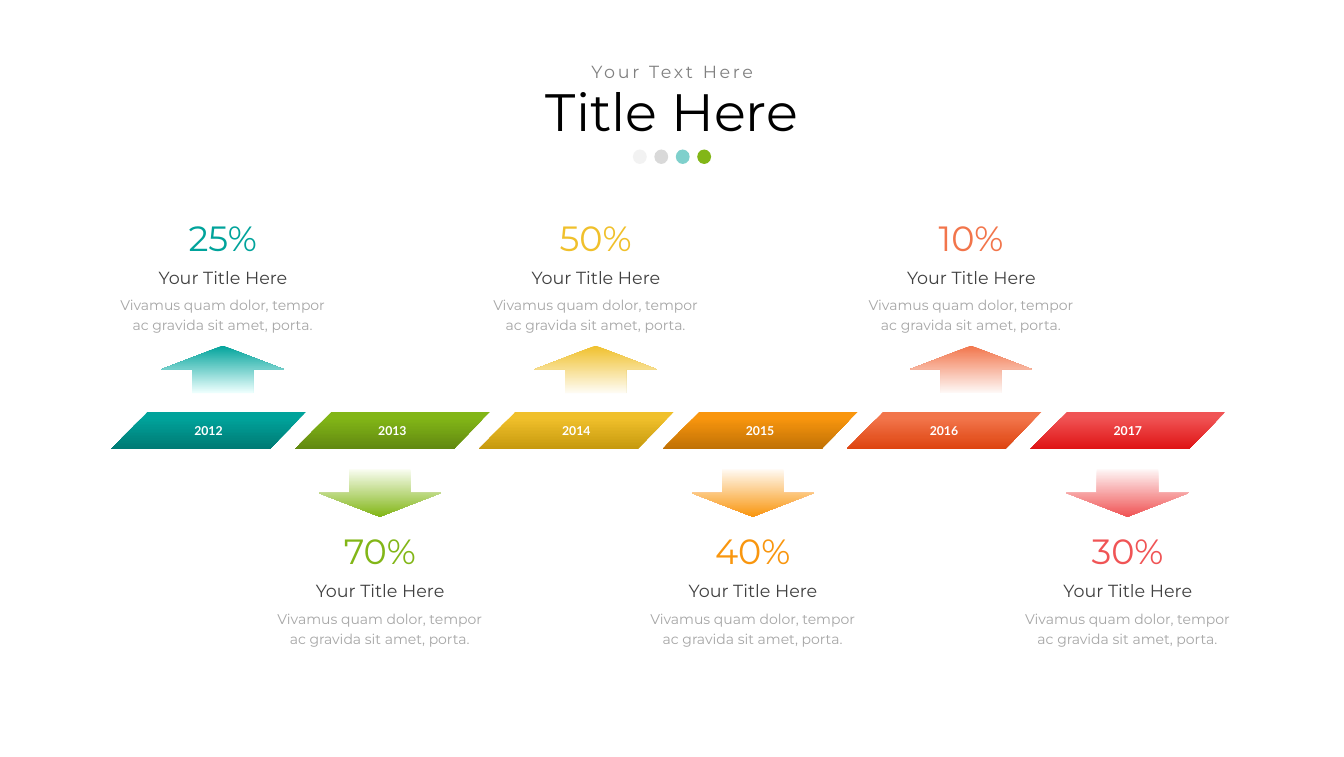
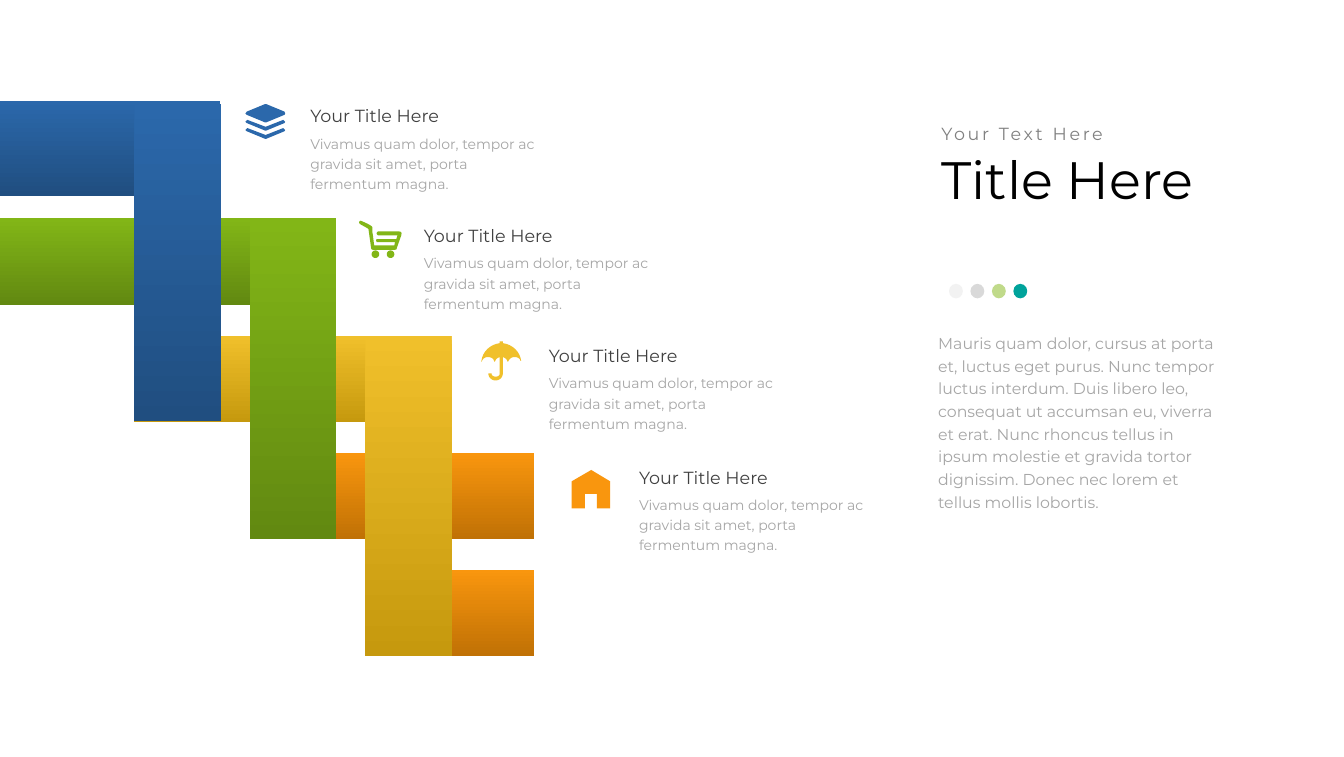
from dataclasses import dataclass
from math import cos, pi, sin
from typing import NamedTuple

from lxml import etree
from pptx import Presentation, util as u
from pptx.dml.color import RGBColor
from pptx.enum import shapes as sh, text as tx
from pptx.oxml import ns

In = u.Inches
LEFT, CENTER = tx.PP_ALIGN.LEFT, tx.PP_ALIGN.CENTER


@dataclass(frozen=True)
class Theme:
    font: str = "Montserrat"
    label_font: str = "Lato"
    # Colours
    title: str = "000000"
    subtitle: str = "808080"
    heading: str = "404040"
    body: str = "A6A6A6"
    white: str = "FFFFFF"
    light: str = "F2F2F2"
    grey: str = "D9D9D9"
    teal: str = "00A39B"
    green: str = "82B617"
    yellow: str = "F0C02B"
    orange: str = "F9960E"
    coral: str = "F2754B"
    red: str = "F05455"
    blue: str = "2B68AB"
    # Type sizes
    title_size: int = 60
    share_size: int = 40
    heading_size: int = 20
    intro_size: int = 18
    body_size: int = 16
    label_size: int = 14


T = Theme()
SHADE = {T.teal: "007A74", T.green: "628911", T.yellow: "C6990E",
         T.orange: "C07105", T.coral: "DE4410", T.red: "DF1415", T.blue: "204E80"}


class Box(NamedTuple):
    left: float
    top: float
    width: float
    height: float

    def emu(self) -> tuple:
        return tuple(In(side) for side in self)


class Style(NamedTuple):
    size: int
    color: str
    align: int = LEFT
    line: float = 1.2
    font: str = T.font
    bold: bool = False
    tracking: int = 0


class Milestone(NamedTuple):
    year: str
    share: str
    color: str
    pale: str
    center: float


class Band(NamedTuple):
    box: Box
    color: str


class Topic(NamedTuple):
    left: float
    top: float
    color: str
    icon_left: float
    icon_top: float
    icon: list


MILESTONES = [
    Milestone("2012", "25%", T.teal, "EEFFFE", 3.53),
    Milestone("2013", "70%", T.green, "F9FDF1", 6.02),
    Milestone("2014", "50%", T.yellow, "FEFCF4", 9.44),
    Milestone("2015", "40%", T.orange, "FFFAF3", 11.93),
    Milestone("2016", "10%", T.coral, "FEF8F6", 15.39),
    Milestone("2017", "30%", T.red, "FEF6F6", 17.87),
]

# Woven bands, from back to front
BANDS = [
    Band(Box(0, 3.46, 5.33, 1.37), T.green),
    Band(Box(2.13, 5.32, 5.03, 1.37), T.yellow),
    Band(Box(3.96, 7.18, 4.5, 1.37), T.orange),
    Band(Box(5.79, 9.03, 2.67, 1.37), T.orange),
    Band(Box(0, 1.6, 3.49, 1.5), T.blue),
    Band(Box(2.13, 1.65, 1.37, 5.03), T.blue),
    Band(Box(3.96, 3.46, 1.37, 5.09), T.green),
    Band(Box(5.79, 5.32, 1.37, 5.08), T.yellow),
]


# Icon outlines: a pair is a corner, six numbers are a cubic curve
def wheel(x: float, y: float, radius: float) -> list:
    return [(x + radius * cos(k * pi / 12), y + radius * sin(k * pi / 12)) for k in range(24)]


def chevron(top: float) -> list:
    points = [(.03, 0), (.32, .11), (.6, 0), (.63, .03), (.62, .05),
              (.33, .17), (.31, .17), (.02, .05), (0, .03)]
    return [(x, y + top) for x, y in points]


LAYERS = [
    [(.02, .12), (.31, 0), (.33, 0), (.62, .12), (.63, .15),
     (.62, .17), (.33, .29), (.31, .29), (.02, .17), (0, .15)],
    chevron(.25), chevron(.38),
]
CART = [
    [(.66, .18), (.32, .18), (.32, .18, .3, .19, .3, .21), (.3, .23, .32, .24, .32, .24),
     (.63, .24), (.61, .3), (.3, .3), (.29, .32), (.3, .35), (.59, .35), (.58, .4),
     (.26, .4), (.24, .24), (.23, .18), (.23, .11), (.22, .09, .17, .06, .05, .01),
     (.03, 0, 0, .05, .05, .07), (.14, .12), (.17, .14), (.21, .43),
     (.21, .43, .21, .47, .24, .47), (.59, .47), (.62, .47, .62, .44, .62, .44),
     (.69, .24), (.69, .24, .71, .18, .66, .18)],
    wheel(.28, .54, .06), wheel(.52, .54, .06),
]
UMBRELLA = [
    [(.63, .31), (.61, .16, .49, .05, .34, .03), (.34, 0), (.29, 0), (.29, .03),
     (.14, .05, .02, .16, 0, .31), (0, .33, 0, .33, .01, .31),
     (.03, .27, .06, .25, .1, .25), (.15, .25, .19, .27, .2, .31),
     (.21, .33, .21, .33, .22, .31), (.23, .28, .26, .26, .29, .25), (.29, .51),
     (.29, .54, .27, .56, .23, .56), (.22, .56), (.19, .56, .16, .54, .16, .51),
     (.11, .51), (.11, .57, .16, .62, .22, .62), (.23, .62),
     (.29, .62, .34, .57, .34, .51), (.34, .25), (.37, .26, .4, .28, .41, .31),
     (.42, .33, .42, .33, .43, .31), (.45, .27, .48, .25, .53, .25),
     (.57, .25, .61, .27, .62, .31)],
]
HOUSE = [[(0, .18), (0, .61), (.21, .61), (.21, .38), (.4, .38),
          (.4, .61), (.61, .61), (.61, .18), (.31, 0)]]

TOPICS = [
    Topic(4.82, 1.55, T.blue, 3.89, 1.65, LAYERS),
    Topic(6.62, 3.45, T.green, 5.67, 3.49, CART),
    Topic(8.6, 5.35, T.yellow, 7.63, 5.41, UMBRELLA),
    Topic(10.03, 7.28, T.orange, 9.06, 7.45, HOUSE),
]

HEADING = "Your Title Here"
BLURB = "Vivamus quam dolor, tempor ac gravida sit amet, porta"
INTRO = ("Mauris quam dolor, cursus at porta et, luctus eget purus. Nunc tempor luctus "
         "interdum. Duis libero leo, consequat ut accumsan eu, viverra et erat. Nunc rhoncus "
         "tellus in ipsum molestie et gravida tortor dignissim. Donec nec lorem et tellus "
         "mollis lobortis.")


# Formatting helpers
def assign(target, values: dict) -> None:
    for name, value in values.items():
        setattr(target, name, value)


def paint(shape, color: str, alpha: int = 100) -> None:
    shape.shadow.inherit = False
    shape.line.fill.background()
    shape.fill.solid()
    shape.fill.fore_color.rgb = RGBColor.from_string(color)
    if alpha < 100:
        rgb = shape.fill._xPr.find(".//" + ns.qn("a:srgbClr"))
        etree.SubElement(rgb, ns.qn("a:alpha"), val=str(alpha * 1000))


def shade(shape, top: str, bottom: str, start: float = 0) -> None:
    """Fill a shape with a gradient that runs downwards."""
    shape.shadow.inherit = False
    shape.line.fill.background()
    shape.fill.gradient()
    shape.fill.gradient_angle = 270
    for stop, color, position in zip(shape.fill.gradient_stops, (top, bottom), (start, 1)):
        stop.color.rgb = RGBColor.from_string(color)
        stop.position = position


def write(shape, text: str, style: Style, **frame_format) -> None:
    frame = shape.text_frame
    assign(frame, {"word_wrap": True, "vertical_anchor": tx.MSO_ANCHOR.TOP,
                   "auto_size": tx.MSO_AUTO_SIZE.NONE, **frame_format})
    paragraph = frame.paragraphs[0]
    assign(paragraph, {"alignment": style.align, "line_spacing": style.line})
    run = paragraph.add_run()
    run.text = text
    assign(run.font, {"size": u.Pt(style.size), "name": style.font, "bold": style.bold})
    run.font.color.rgb = RGBColor.from_string(style.color)
    if style.tracking:
        run._r.get_or_add_rPr().set("spc", str(style.tracking * 100))


def add_text(slide, box: Box, text: str, style: Style, **frame_format) -> None:
    write(slide.shapes.add_textbox(*box.emu()), text, style, **frame_format)


def add_growing(slide, box: Box, text: str, style: Style, wrap: bool = True) -> None:
    add_text(slide, box, text, style, word_wrap=wrap,
             auto_size=tx.MSO_AUTO_SIZE.SHAPE_TO_FIT_TEXT)


# Parts that both slides share
def add_header(slide, title: Box, subtitle: Box, align: int) -> None:
    holder = slide.shapes.title
    assign(holder, dict(zip(("left", "top", "width", "height"), title.emu())))
    write(holder, "Title Here", Style(T.title_size, T.title, align, 0.9))
    add_text(slide, subtitle, "Your Text Here",
             Style(T.heading_size, T.subtitle, align, 0.9, tracking=3))


def add_dots(slide, left: float, top: float, third: str, fourth: str) -> None:
    dots = [(T.light, 100), (T.grey, 98), (third, 50), (fourth, 100)]
    for i, (color, alpha) in enumerate(dots):
        box = Box(left + 0.34 * i, top, 0.22, 0.23)
        paint(slide.shapes.add_shape(sh.MSO_SHAPE.OVAL, *box.emu()), color, alpha)


def add_caption(slide, heading: Box, body: Box, text: str, align: int) -> None:
    add_growing(slide, heading, HEADING, Style(T.heading_size, T.heading, align))
    add_growing(slide, body, text, Style(T.body_size, T.body, align))


def add_icon(slide, topic: Topic) -> None:
    def place(x: float, y: float) -> tuple:
        return In(topic.icon_left + x), In(topic.icon_top + y)

    builder = None
    for contour in topic.icon:
        pen = contour[0]
        if builder is None:
            builder = slide.shapes.build_freeform(*place(*pen))
        else:
            builder.move_to(*place(*pen))
        points = []
        for step in contour[1:]:
            if len(step) == 2:
                points.append(step)
            else:
                xs, ys = (pen[0], *step[::2]), (pen[1], *step[1::2])
                for t in (k / 8 for k in range(1, 9)):
                    weights = ((1 - t) ** 3, 3 * t * (1 - t) ** 2, 3 * t * t * (1 - t), t ** 3)
                    points.append(tuple(sum(w * v for w, v in zip(weights, axis))
                                        for axis in (xs, ys)))
            pen = step[-2:]
        builder.add_line_segments([place(*point) for point in points], close=True)
    paint(builder.convert_to_shape(), topic.color)


# Slides
def build_timeline(slide) -> None:
    add_header(slide, Box(1.02, 1.31, 19.26, 1.03), Box(7.48, 0.95, 6.35, 0.35), CENTER)
    add_dots(slide, 10.03, 2.37, T.teal, T.green)
    label = Style(T.label_size, T.white, CENTER, 1, T.label_font, True)
    for i, item in enumerate(MILESTONES):
        # Year on the band
        box = Box(1.76 + 2.914 * i, 6.53, 3.09, 0.59)
        year = slide.shapes.add_shape(sh.MSO_SHAPE.PARALLELOGRAM, *box.emu())
        year.adjustments[0] = 0.98
        shade(year, item.color, SHADE[item.color], 0.15)
        write(year, item.year, label, vertical_anchor=tx.MSO_ANCHOR.MIDDLE)

        # Arrow and caption, above and below by turns
        above = i % 2 == 0
        arrow_top, top = (5.48, 3.38) if above else (7.44, 8.35)
        kind = sh.MSO_SHAPE.UP_ARROW if above else sh.MSO_SHAPE.DOWN_ARROW
        arrow = slide.shapes.add_shape(kind, *Box(item.center - 0.97, arrow_top, 1.94, 0.75).emu())
        shade(arrow, *((item.color, item.pale) if above else (item.pale, item.color)))
        add_growing(slide, Box(item.center - 0.75, top, 1.5, 0.77), item.share,
                    Style(T.share_size, item.color, CENTER, 1), wrap=False)
        add_caption(slide, Box(item.center - 1.86, top + 0.73, 3.73, 0.51),
                    Box(item.center - 1.83, top + 1.22, 3.66, 0.75), BLURB + ".", CENTER)


def build_weave(slide) -> None:
    add_header(slide, Box(14.82, 2.39, 5.16, 1.97), Box(14.82, 1.94, 3.14, 0.44), LEFT)
    add_dots(slide, 15.04, 4.5, T.green, T.teal)
    add_growing(slide, Box(14.77, 5.18, 4.63, 3.01), INTRO, Style(T.intro_size, T.body))
    for band in BANDS:
        strip = slide.shapes.add_shape(sh.MSO_SHAPE.RECTANGLE, *band.box.emu())
        shade(strip, band.color, SHADE[band.color])
    for topic in TOPICS:
        add_caption(slide, Box(topic.left, topic.top, 3.73, 0.51),
                    Box(topic.left, topic.top + 0.49, 3.97, 1.07),
                    BLURB + " fermentum magna.", LEFT)
        add_icon(slide, topic)


def main() -> None:
    deck = Presentation()
    assign(deck, {"slide_width": In(21.3), "slide_height": In(12)})
    title_only = deck.slide_layouts[5]
    for build in (build_timeline, build_weave):
        build(deck.slides.add_slide(title_only))
    deck.save("out.pptx")


if __name__ == "__main__":
    main()
